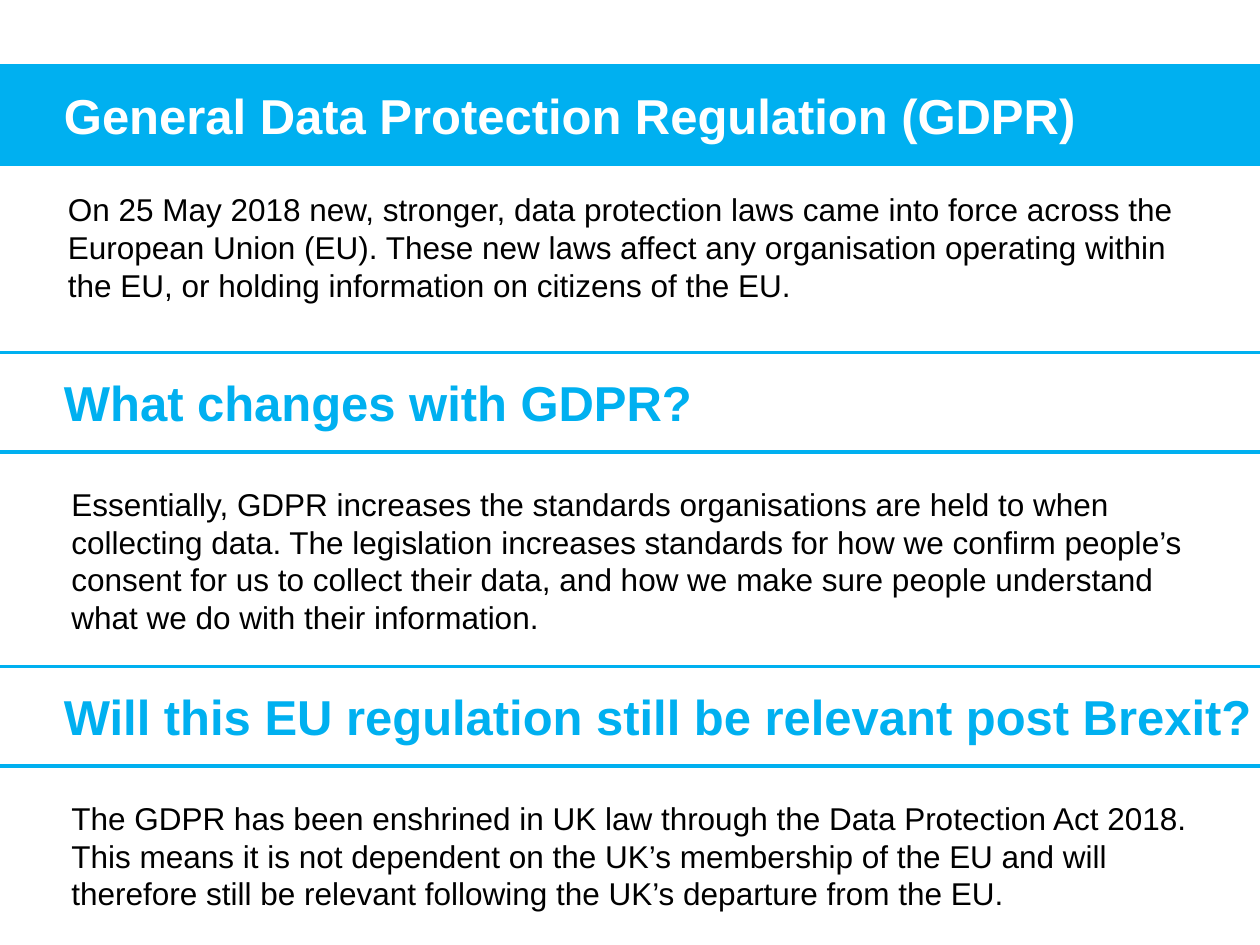
from dataclasses import dataclass

from pptx import Presentation
from pptx import util as u
from pptx.dml.color import RGBColor
from pptx.enum import shapes, text


@dataclass(frozen=True)
class Theme:
    accent: RGBColor = RGBColor(0x00, 0xB0, 0xF0)
    light: RGBColor = RGBColor(0xFF, 0xFF, 0xFF)
    dark: RGBColor = RGBColor(0x00, 0x00, 0x00)
    font: str = "Arial"
    heading_size: u.Pt = u.Pt(28)
    body_size: u.Pt = u.Pt(18)
    line_width: u.Pt = u.Pt(2)


theme = Theme()


def write(box, words, size, colour, bold=False):
    """Put one left-aligned, wrapped paragraph into a box."""
    frame = box.text_frame
    frame.text = words
    frame.word_wrap = True
    para = frame.paragraphs[0]
    para.alignment = text.PP_ALIGN.LEFT
    span = para.runs[0]
    span.font.name = theme.font
    span.font.size = size
    span.font.bold = bold
    span.font.color.rgb = colour


# Slide
deck = Presentation()
deck.slide_width = u.Cm(25.4)
deck.slide_height = u.Cm(19.05)
page = deck.slides.add_slide(deck.slide_layouts[5])

# Sections: heading, heading top, body, body left, body top, body height (cm)
sections = [
    ("General Data Protection Regulation (GDPR)", 1.32,
     "On 25 May 2018 new, stronger, data protection laws came into force "
     "across the European Union (EU). These new laws affect any organisation "
     "operating within the EU, or holding information on citizens of the EU.",
     1.12, 3.71, 2.57),
    ("What changes with GDPR?", 7.11,
     "Essentially, GDPR increases the standards organisations are held to "
     "when collecting data. The legislation increases standards for how we "
     "confirm people’s consent for us to collect their data, and how we make "
     "sure people understand what we do with their information.",
     1.19, 9.65, 3.33),
    ("Will this EU regulation still be relevant post Brexit?", 13.44,
     "The GDPR has been enshrined in UK law through the Data Protection Act "
     "2018. This means it is not dependent on the UK’s membership of the EU "
     "and will therefore still be relevant following the UK’s departure from "
     "the EU.",
     1.19, 15.98, 2.57),
]

for index, (heading, top, body, body_left, body_top, body_height) in enumerate(sections):
    # Heading band, running past both slide edges; the first is the title
    place = u.Cm(-1.5), u.Cm(top), u.Cm(28.6), u.Cm(2)
    if index == 0:
        band = page.shapes.title
        band.left, band.top, band.width, band.height = place
        band.fill.solid()
        band.fill.fore_color.rgb = theme.accent
        heading_colour = theme.light
    else:
        band = page.shapes.add_shape(shapes.MSO_SHAPE.RECTANGLE, *place)
        band.shadow.inherit = False
        band.fill.background()
        heading_colour = theme.accent
    band.line.color.rgb = theme.accent
    band.line.width = theme.line_width
    write(band, heading, theme.heading_size, heading_colour, bold=True)
    band.text_frame.auto_size = text.MSO_AUTO_SIZE.NONE
    band.text_frame.vertical_anchor = text.MSO_ANCHOR.MIDDLE
    band.text_frame.margin_left = u.Cm(2.79)

    # Body text
    box = page.shapes.add_textbox(
        u.Cm(body_left), u.Cm(body_top), u.Cm(23.19), u.Cm(body_height))
    write(box, body, theme.body_size, theme.dark)
    box.text_frame.auto_size = text.MSO_AUTO_SIZE.SHAPE_TO_FIT_TEXT

deck.save("out.pptx")
